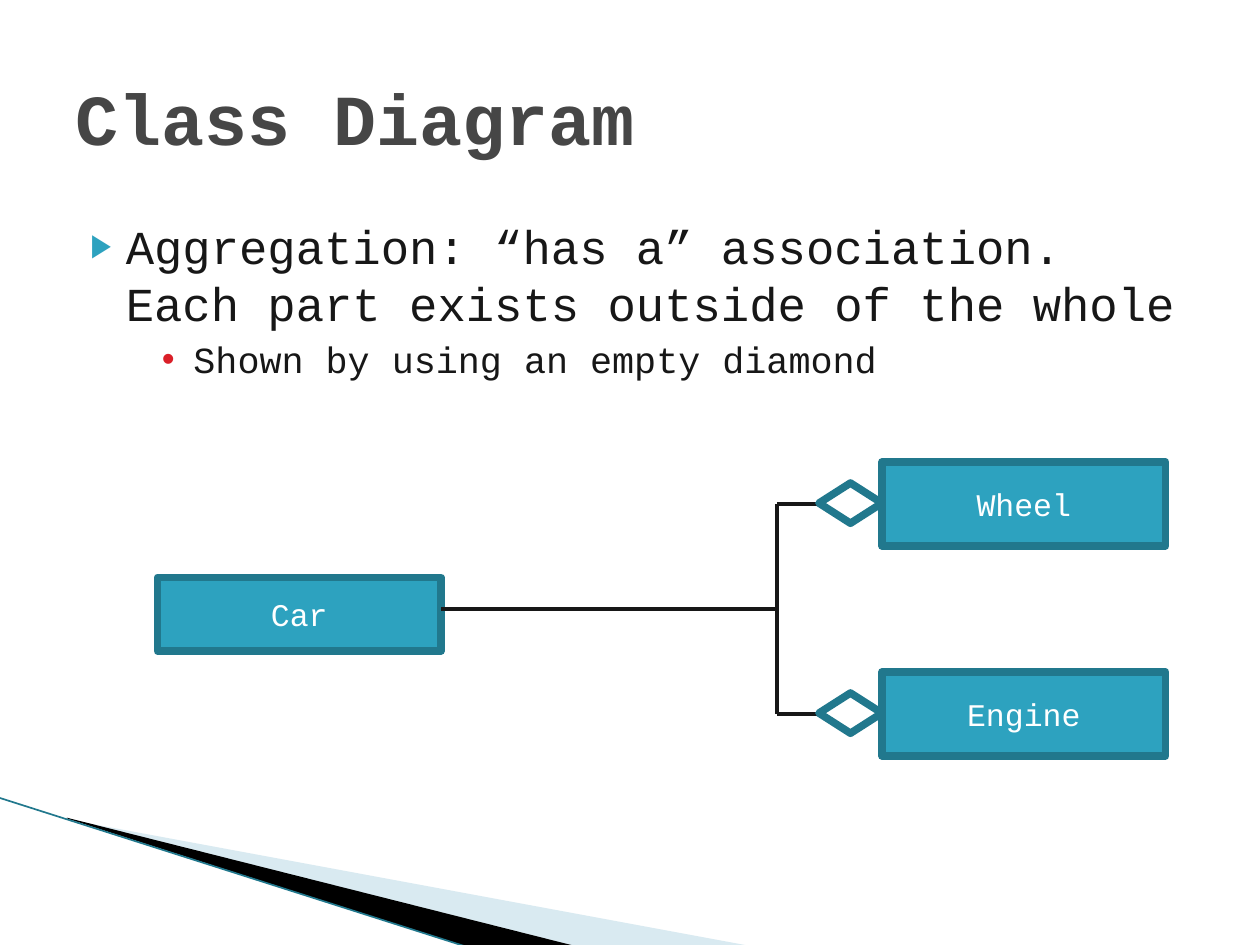
from lxml.etree import SubElement
from pptx import Presentation
from pptx.dml.color import RGBColor
from pptx.enum.shapes import MSO_CONNECTOR as Connector, MSO_SHAPE as Shape
from pptx.enum.text import MSO_ANCHOR as Anchor, PP_ALIGN as Align
from pptx.oxml.ns import qn
from pptx.util import Pt

FONT = "Courier New"
COLORS = {
    "text": "171717", "title": "464646", "white": "FFFFFF", "black": "000000",
    "teal": "2DA2BF", "edge": "21788D", "red": "DA1F28", "pale": "A0CBDC",
}


def color(name):
    return RGBColor.from_string(COLORS[name])


def add_run(paragraph, text, size, color_name, bold=False):
    run = paragraph.add_run()
    run.text = text
    run.font.name = FONT
    run.font.size = Pt(size)
    run.font.bold = bold
    run.font.color.rgb = color(color_name)


def add_text_frame(slide, left, top, width, height, anchor):
    frame = slide.shapes.add_textbox(Pt(left), Pt(top), Pt(width), Pt(height)).text_frame
    frame.word_wrap = True
    frame.vertical_anchor = anchor
    return frame


def set_bullet(paragraph, symbol, color_name, percent, margin, indent):
    properties = paragraph._p.get_or_add_pPr()
    properties.set("marL", str(Pt(margin)))
    properties.set("indent", str(Pt(indent)))
    bullet_color = SubElement(properties, qn("a:buClr"))
    SubElement(bullet_color, qn("a:srgbClr"), val=COLORS[color_name])
    SubElement(properties, qn("a:buSzPct"), val=str(percent * 1000))
    SubElement(properties, qn("a:buFont"), typeface="Arial")
    SubElement(properties, qn("a:buChar"), char=symbol)


def add_wedge(slide, points, fill, opacity=100):
    builder = slide.shapes.build_freeform(Pt(points[0][0]), Pt(points[0][1]), scale=1.0)
    builder.add_line_segments([(Pt(x), Pt(y)) for x, y in points[1:]], close=True)
    shape = builder.convert_to_shape()
    shape.shadow.inherit = False
    shape.fill.solid()
    shape.fill.fore_color.rgb = color(fill)
    shape.line.fill.background()
    if opacity < 100:
        fill_color = shape._element.spPr.find(".//" + qn("a:srgbClr"))
        SubElement(fill_color, qn("a:alpha"), val=str(opacity * 1000))


def add_line(slide, start, end, color_name="text", width=1.75):
    line = slide.shapes.add_connector(
        Connector.STRAIGHT, *(Pt(value) for value in (*start, *end)))
    line.line.color.rgb = color(color_name)
    line.line.width = Pt(width)
    SubElement(line._element.spPr, qn("a:effectLst"))


def add_node(slide, kind, left, top, width, height, fill, label=None):
    shape = slide.shapes.add_shape(kind, Pt(left), Pt(top), Pt(width), Pt(height))
    shape.shadow.inherit = False
    shape.fill.solid()
    shape.fill.fore_color.rgb = color(fill)
    shape.line.color.rgb = color("edge")
    shape.line.width = Pt(4.33)
    if label:
        shape.text_frame.vertical_anchor = Anchor.MIDDLE
        paragraph = shape.text_frame.paragraphs[0]
        paragraph.alignment = Align.CENTER
        add_run(paragraph, label, 18, "white")


def add_decoration(slide):
    add_wedge(slide, [(39.6, 468.5), (428.4, 540.5), (328.3, 540.5), (39.6, 468)], "pale", 40)
    add_wedge(slide, [(38.2, 467.3), (329, 540.7), (267.8, 541.4), (38.9, 468)], "black")
    add_line(slide, (-0.7, 455.8), (267.8, 541.4), "edge", 0.95)


def add_body(slide):
    frame = add_text_frame(slide, 36, 116.6, 648, 356.4, Anchor.TOP)
    frame.margin_top = Pt(7.6)
    paragraph = frame.paragraphs[0]
    set_bullet(paragraph, "▶", "teal", 68, 28.8, -20.16)
    add_run(paragraph, "Aggregation: “has a” association. "
            "Each part exists outside of the whole", 27, "text")
    paragraph = frame.add_paragraph()
    paragraph.space_before = Pt(3.5)
    set_bullet(paragraph, "•", "red", 100, 67.5, -18)
    add_run(paragraph, "Shown by using an empty diamond", 21, "text")


def add_diagram(slide):
    middle, branch, part_left = 348, 444, 504
    add_node(slide, Shape.RECTANGLE, 90, 330, 162, 42, "teal", "Car")
    add_line(slide, (252, middle), (branch, middle))
    for label, center in (("Wheel", 288), ("Engine", 408)):
        add_node(slide, Shape.RECTANGLE, part_left, center - 24, 162, 48, "teal", label)
        add_line(slide, (branch, center), (part_left, center))
        add_line(slide, (branch, middle), (branch, center))
        add_node(slide, Shape.FLOWCHART_DECISION,
                 part_left - 36, center - 12, 36, 23, "white")


def main():
    """Build the class diagram slide on aggregation."""
    presentation = Presentation()
    presentation.slide_width, presentation.slide_height = Pt(720), Pt(540)
    slide = presentation.slides.add_slide(presentation.slide_layouts[6])
    add_decoration(slide)
    add_body(slide)
    title = add_text_frame(slide, 36, 21.6, 648, 90, Anchor.MIDDLE)
    add_run(title.paragraphs[0], "Class Diagram", 41, "title", bold=True)
    add_diagram(slide)
    presentation.save("out.pptx")


if __name__ == "__main__":
    main()
